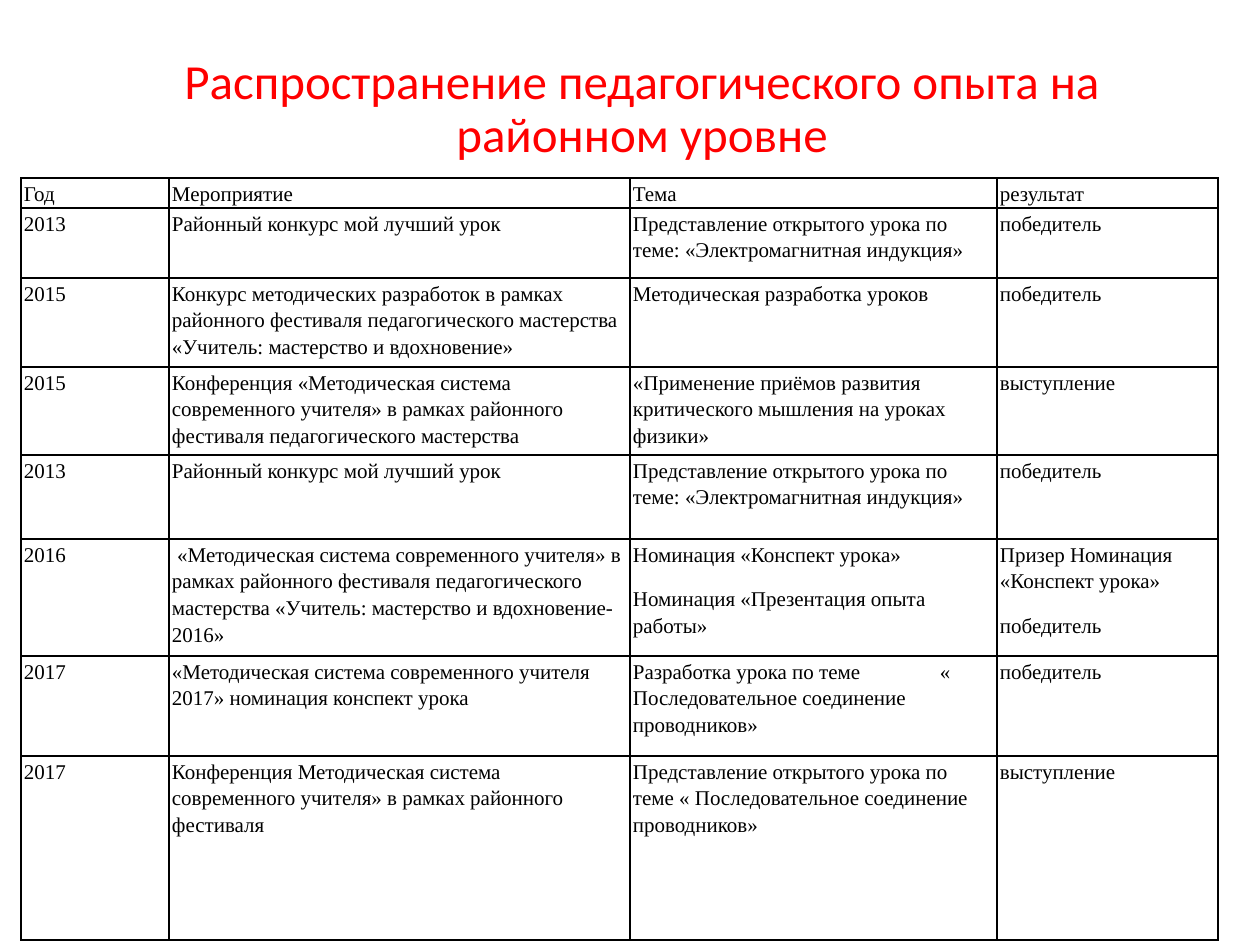
from lxml import etree
from pptx import Presentation
from pptx import util as u
from pptx.dml.color import RGBColor
from pptx.enum import text
from pptx.oxml.ns import qn

PX = 914400 / 126
COLORS = {"title": "FF0000", "ink": "000000"}
COLUMN_WIDTHS = [148, 461, 367, 221]
ROW_HEIGHTS = [30, 70, 89, 88, 84, 117, 100, 184]
TAB_STOP = 307

OPEN_LESSON = "Представление открытого урока по теме: «Электромагнитная индукция»"
BEST_LESSON = "Районный конкурс мой лучший урок"
ROWS = [
    ["Год", "Мероприятие", "Тема", "результат"],
    ["2013", BEST_LESSON, OPEN_LESSON, "победитель"],
    ["2015",
     "Конкурс методических разработок в рамках районного фестиваля "
     "педагогического мастерства «Учитель: мастерство и вдохновение»",
     "Методическая разработка уроков", "победитель"],
    ["2015",
     "Конференция «Методическая система современного учителя» в рамках "
     "районного фестиваля педагогического мастерства",
     "«Применение приёмов развития критического мышления на уроках физики»",
     "выступление"],
    ["2013", BEST_LESSON, OPEN_LESSON, "победитель"],
    ["2016",
     " «Методическая система современного учителя» в рамках районного фестиваля "
     "педагогического мастерства «Учитель: мастерство и вдохновение- 2016»",
     "Номинация «Конспект урока»\nНоминация «Презентация опыта работы»",
     "Призер Номинация «Конспект урока»\nпобедитель"],
    ["2017",
     "«Методическая система современного учителя 2017» номинация конспект урока",
     "Разработка урока по теме\t« Последовательное соединение проводников»",
     "победитель"],
    ["2017",
     "Конференция Методическая система современного учителя» в рамках "
     "районного фестиваля",
     "Представление открытого урока по теме « Последовательное соединение проводников»",
     "выступление"],
]


def px(length):
    return u.Emu(round(length * PX))


def write(frame, content, *, font, size, color, align, line_spacing, after=0):
    """Fill a text frame, one paragraph for each line of content."""
    frame.word_wrap = True
    for index, line in enumerate(content.split("\n")):
        paragraph = frame.add_paragraph() if index else frame.paragraphs[0]
        paragraph.alignment = align
        paragraph.line_spacing = line_spacing
        paragraph.space_after = u.Pt(after)
        if "\t" in line:
            tabs = etree.SubElement(paragraph._p.get_or_add_pPr(), qn("a:tabLst"))
            etree.SubElement(tabs, qn("a:tab"), pos=str(px(TAB_STOP)), algn="l")
        run = paragraph.add_run()
        run.text = line
        run.font.name = font
        run.font.size = u.Pt(size)
        run.font.color.rgb = RGBColor.from_string(COLORS[color])


presentation = Presentation()
presentation.slide_width = px(1260)
presentation.slide_height = px(945)
slide = presentation.slides.add_slide(presentation.slide_layouts[6])

title = slide.shapes.add_textbox(px(87), px(50), px(1110), px(120))
title.text_frame.vertical_anchor = text.MSO_ANCHOR.MIDDLE
write(title.text_frame, "Распространение педагогического опыта на районном уровне",
      font="Calibri", size=28, color="title", align=text.PP_ALIGN.CENTER,
      line_spacing=0.9)

table = slide.shapes.add_table(
    len(ROWS), len(COLUMN_WIDTHS), px(21), px(178),
    px(sum(COLUMN_WIDTHS)), px(sum(ROW_HEIGHTS))).table
table.first_row = False
table.horz_banding = False
for column, width in zip(table.columns, COLUMN_WIDTHS):
    column.width = px(width)
for row, height, values in zip(table.rows, ROW_HEIGHTS, ROWS):
    row.height = px(height)
    for cell, value in zip(row.cells, values):
        cell.margin_left = cell.margin_right = px(3)
        cell.margin_top = px(1)
        cell.margin_bottom = 0
        write(cell.text_frame, value, font="Times New Roman", size=12, color="ink",
              align=text.PP_ALIGN.LEFT, line_spacing=1.15, after=10)
        properties = cell._tc.get_or_add_tcPr()
        for side in ("lnL", "lnR", "lnT", "lnB"):
            border = etree.SubElement(properties, qn(f"a:{side}"), w=str(u.Pt(1)))
            fill = etree.SubElement(border, qn("a:solidFill"))
            etree.SubElement(fill, qn("a:srgbClr"), val=COLORS["ink"])
        cell.fill.background()

presentation.save("out.pptx")
